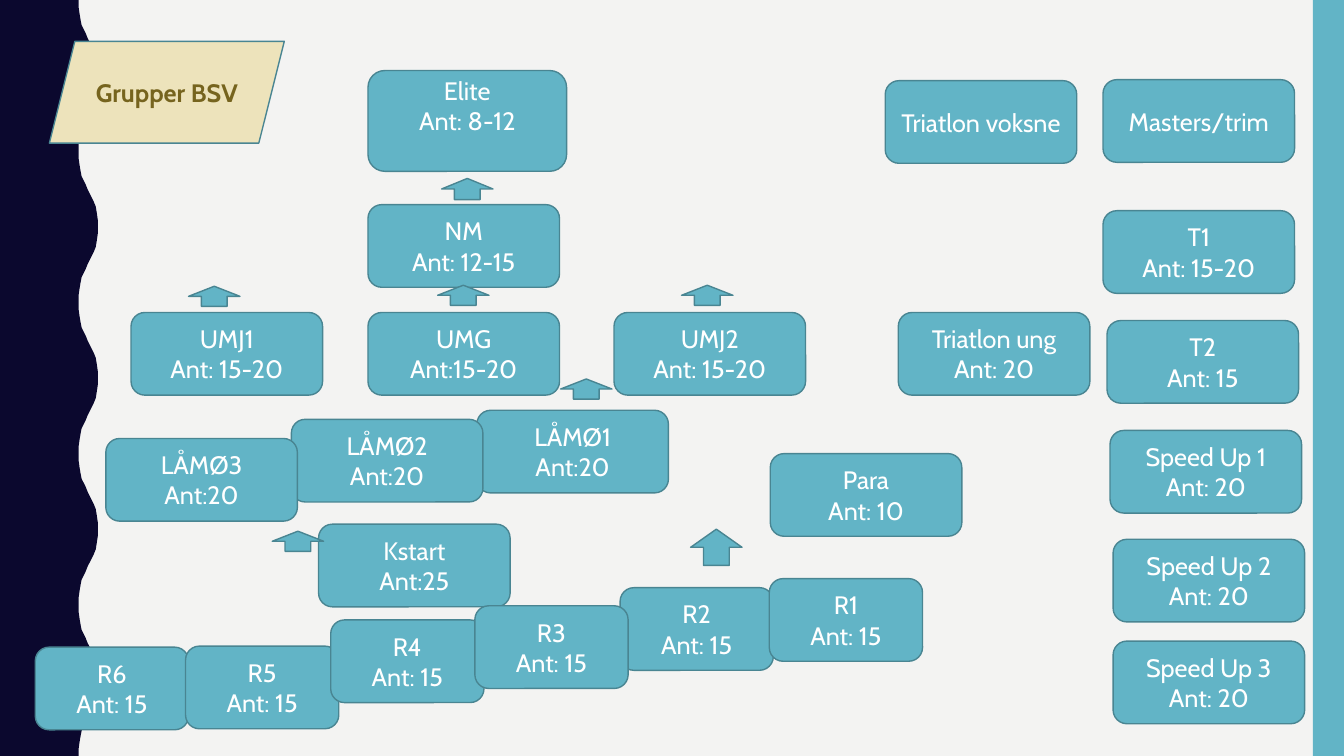
from pptx import Presentation
from pptx.dml.color import RGBColor
from pptx.enum.shapes import MSO_SHAPE
from pptx.enum.text import MSO_ANCHOR, PP_ALIGN
from pptx.util import Pt

PX = 9144  # 100 px to the inch
WIDTH, HEIGHT = 1333, 750
TEAL, TEAL_EDGE = "62B4C6", "498592"
NAVY, PAPER, SAND, BRONZE, WHITE = "0B082E", "F3F3F2", "EDE3BB", "76641E", "FFFFFF"
GROUP_HEIGHT = 82
ARROW_WIDTH = 51

# One swing of the wavy edge to the right: (x, y)
SWING = [(78, 0), (78, 7), (79, 14), (80, 20), (81, 25), (83, 29), (85, 33), (87, 38),
         (89, 42), (91, 46), (93, 50), (95, 55), (96, 61), (97, 68), (97, 75)]
WAVELENGTH = 150

# Left, top, width, text
GROUPS = [
    (365, 203, 190, "NM\nAnt: 12-15"),
    (130, 310, 190, "UMJ1\nAnt: 15-20"),
    (365, 310, 190, "UMG\nAnt:15-20"),
    (609, 310, 190, "UMJ2\nAnt: 15-20"),
    (473, 407, 190, "LÅMØ1\nAnt:20"),
    (289, 416, 190, "LÅMØ2\nAnt:20"),
    (105, 435, 190, "LÅMØ3\nAnt:20"),
    (35, 642, 152, "R6\nAnt: 15"),
    (316, 520, 190, "Kstart\nAnt:25"),
    (1094, 79, 190, "Masters/trim"),
    (1094, 209, 190, "T1\nAnt: 15-20"),
    (1098, 318, 190, "T2\nAnt: 15"),
    (1101, 427, 190, "Speed Up 1\nAnt: 20"),
    (1104, 535, 190, "Speed Up 2\nAnt: 20"),
    (184, 641, 152, "R5\nAnt: 15"),
    (328, 615, 152, "R4\nAnt: 15"),
    (615, 583, 152, "R2\nAnt: 15"),
    (763, 574, 152, "R1\nAnt: 15"),
    (471, 601, 152, "R3\nAnt: 15"),
    (1104, 636, 190, "Speed Up 3\nAnt: 20"),
    (764, 450, 190, "Para\nAnt: 10"),
    (878, 80, 190, "Triatlon voksne"),
    (891, 310, 190, "Triatlon ung\nAnt: 20"),
]

# Left, top, height
ARROWS = [(438, 177, 21), (187, 284, 20), (434, 283, 20), (676, 283, 20),
          (270, 527, 20), (556, 376, 20), (685, 525, 36)]


def rgb(code):
    return RGBColor.from_string(code)


def paint(shape, fill, edge=None):
    shape.shadow.inherit = False
    shape.fill.solid()
    shape.fill.fore_color.rgb = rgb(fill)
    if edge:
        shape.line.color.rgb = rgb(edge)
        shape.line.width = Pt(1)
    else:
        shape.line.fill.background()


def add_block(slide, preset, box, fill=TEAL, edge=TEAL_EDGE):
    block = slide.shapes.add_shape(preset, *(n * PX for n in box))
    paint(block, fill, edge)
    return block


def write(shape, text, color=WHITE, bold=False):
    frame = shape.text_frame
    frame.text = text
    frame.word_wrap = True
    frame.vertical_anchor = MSO_ANCHOR.MIDDLE
    for paragraph in frame.paragraphs:
        paragraph.alignment = PP_ALIGN.CENTER
        paragraph.line_spacing = 1.0
        paragraph.space_before = Pt(0)
        font = paragraph.font
        font.name, font.size, font.bold = "Cabin", Pt(18), bold
        font.color.rgb = rgb(color)


def add_group(slide, left, top, width, text, height=GROUP_HEIGHT):
    group = add_block(slide, MSO_SHAPE.ROUNDED_RECTANGLE, (left, top, width, height))
    write(group, text)
    return group


def add_wavy_band(slide):
    wave = SWING + [(x, WAVELENGTH - y) for x, y in reversed(SWING[:-1])]
    edge = [(x, y + start) for start in range(0, HEIGHT, WAVELENGTH) for x, y in wave]
    outline = slide.shapes.build_freeform(0, 0, scale=PX)
    outline.add_line_segments(edge + [(0, HEIGHT)], close=True)
    paint(outline.convert_to_shape(), NAVY)


def add_title(slide, text):
    box = (49, 41, 233, 101)
    add_block(slide, MSO_SHAPE.PARALLELOGRAM, box, SAND)
    title = slide.shapes.title
    title.left, title.top, title.width, title.height = (n * PX for n in box)
    write(title, text, BRONZE, bold=True)
    slide.shapes._spTree.append(title._element)  # in front of its parallelogram


def main():
    deck = Presentation()
    deck.slide_width, deck.slide_height = WIDTH * PX, HEIGHT * PX
    slide = deck.slides.add_slide(deck.slide_layouts[5])
    slide.background.fill.solid()
    slide.background.fill.fore_color.rgb = rgb(PAPER)

    add_wavy_band(slide)
    add_block(slide, MSO_SHAPE.RECTANGLE, (1302, 0, 31, HEIGHT), edge=None)

    elite = add_group(slide, 365, 70, 197, "Elite\nAnt: 8-12", height=100)
    elite.text_frame.margin_bottom = 35 * PX
    for group in GROUPS:
        add_group(slide, *group)
    add_title(slide, "Grupper BSV")
    for left, top, height in ARROWS:
        add_block(slide, MSO_SHAPE.UP_ARROW, (left, top, ARROW_WIDTH, height))

    deck.save("out.pptx")


if __name__ == "__main__":
    main()
